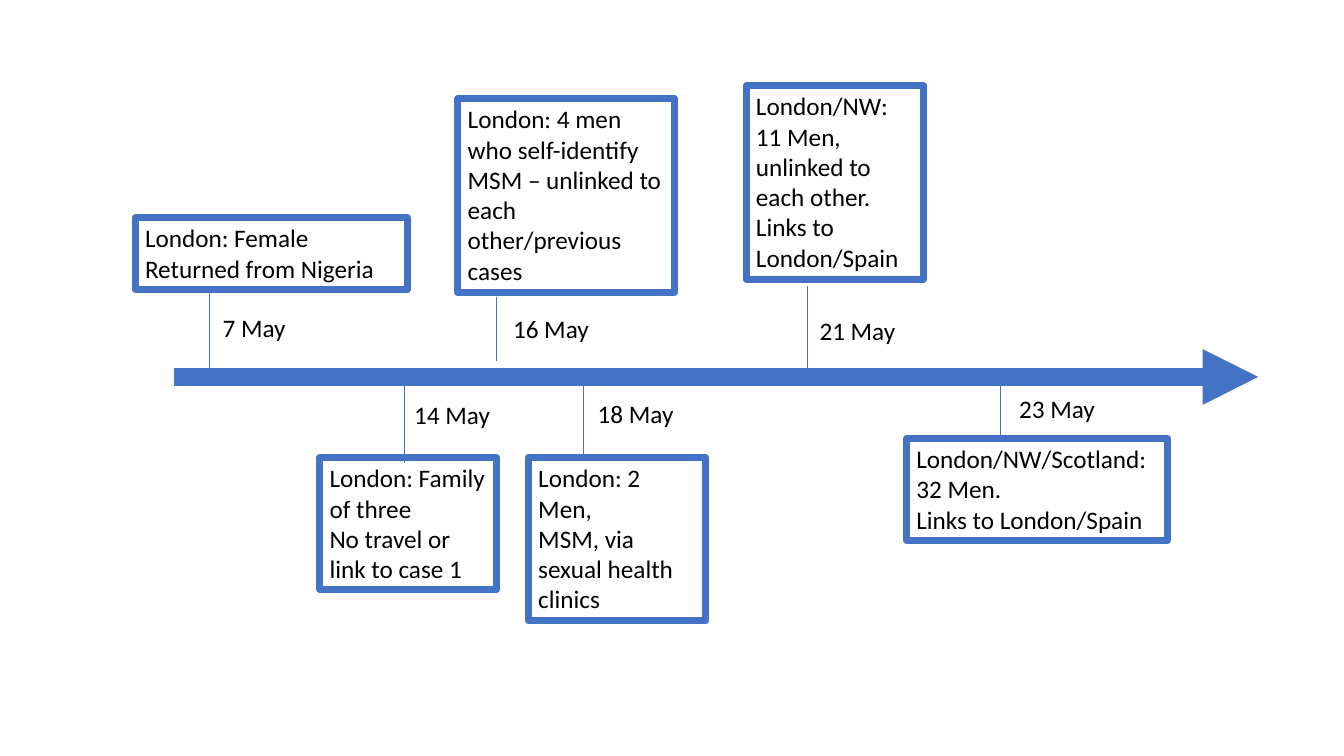
from lxml.etree import SubElement
from pptx import Presentation
from pptx.dml.color import RGBColor
from pptx.enum.shapes import MSO_CONNECTOR
from pptx.enum.text import MSO_AUTO_SIZE
from pptx.oxml.ns import qn
from pptx.util import Inches, Pt


def color(hex_code):
    return RGBColor.from_string(hex_code)


class Timeline:
    BLUE, BLACK = "4472C4", "000000"
    FONT, SIZE = "Calibri", 18

    def __init__(self, slide):
        self.slide = slide

    def line(self, start, end, width, arrow=False):
        connector = self.slide.shapes.add_connector(
            MSO_CONNECTOR.STRAIGHT, *map(Inches, start + end))
        connector.line.color.rgb = color(self.BLUE)
        connector.line.width = Pt(width)
        if arrow:
            SubElement(connector.line._get_or_add_ln(), qn("a:tailEnd"), type="triangle")
        SubElement(connector._element.spPr, qn("a:effectLst"))

    def text(self, area, words, wrap):
        label = self.slide.shapes.add_textbox(*map(Inches, area))
        frame = label.text_frame
        frame.text = words
        frame.word_wrap = wrap
        frame.auto_size = MSO_AUTO_SIZE.SHAPE_TO_FIT_TEXT
        for paragraph in frame.paragraphs:
            for run in paragraph.runs:
                run.font.name = self.FONT
                run.font.size = Pt(self.SIZE)
                run.font.color.rgb = color(self.BLACK)
        return label

    def date(self, left, top, day):
        width = 0.83 if day < 10 else 0.96
        self.text((left, top, width, 0.4), f"{day} May", wrap=False)

    def case_box(self, area, words):
        box = self.text(area, words, wrap=True)
        box.line.color.rgb = color(self.BLUE)
        box.line.width = Pt(5)

    def event(self, day, date_at, stem, area, words):
        x, top, bottom = stem
        self.case_box(area, words)
        self.line((x, top), (x, bottom), 0.5)
        self.date(*date_at, day)


# Day, date position, stem (x, top, bottom), box area, description
EVENTS = [
    (7, (2.11, 3.05), (2.08, 2.86, 3.7), (1.34, 2.16, 2.7, 0.71),
     "London: Female\nReturned from Nigeria"),
    (14, (4.01, 3.91), (4.01, 3.75, 4.59), (3.17, 4.54, 1.76, 1.31),
     "London: Family of three\nNo travel or link to case 1"),
    (16, (4.99, 3.06), (4.92, 2.95, 3.58), (4.54, 0.98, 2.15, 1.92),
     "London: 4 men who self-identify MSM – unlinked to each other/previous cases"),
    (18, (5.83, 3.9), (5.79, 3.7, 4.54), (5.24, 4.54, 1.76, 1.62),
     "London: 2 Men,\nMSM, via sexual health clinics"),
    (21, (8.03, 3.08), (8.01, 2.84, 3.68), (7.4, 0.85, 1.76, 1.92),
     "London/NW: 11 Men, unlinked to each other.\nLinks to London/Spain"),
    (23, (10.01, 3.85), (9.92, 3.72, 4.35), (8.99, 4.35, 2.59, 1.01),
     "London/NW/Scotland: 32 Men.\nLinks to London/Spain"),
]


def main():
    deck = Presentation()
    deck.slide_width, deck.slide_height = Inches(13.33), Inches(7.5)
    timeline = Timeline(deck.slides.add_slide(deck.slide_layouts[6]))

    # Time axis
    timeline.line((1.73, 3.74), (12.48, 3.74), 13.25, arrow=True)

    # Reported cases
    for event in EVENTS:
        timeline.event(*event)

    deck.save("out.pptx")


if __name__ == "__main__":
    main()
